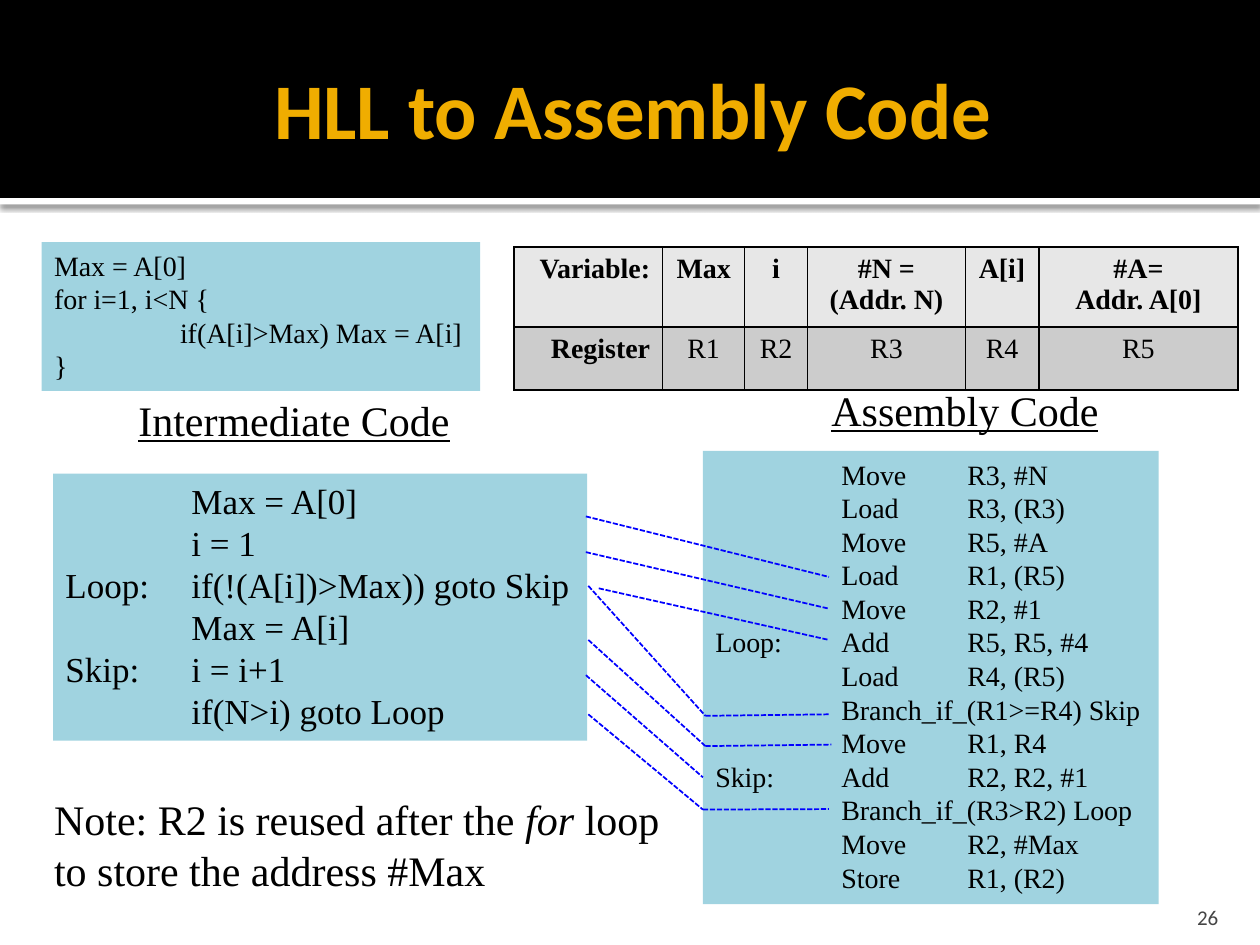
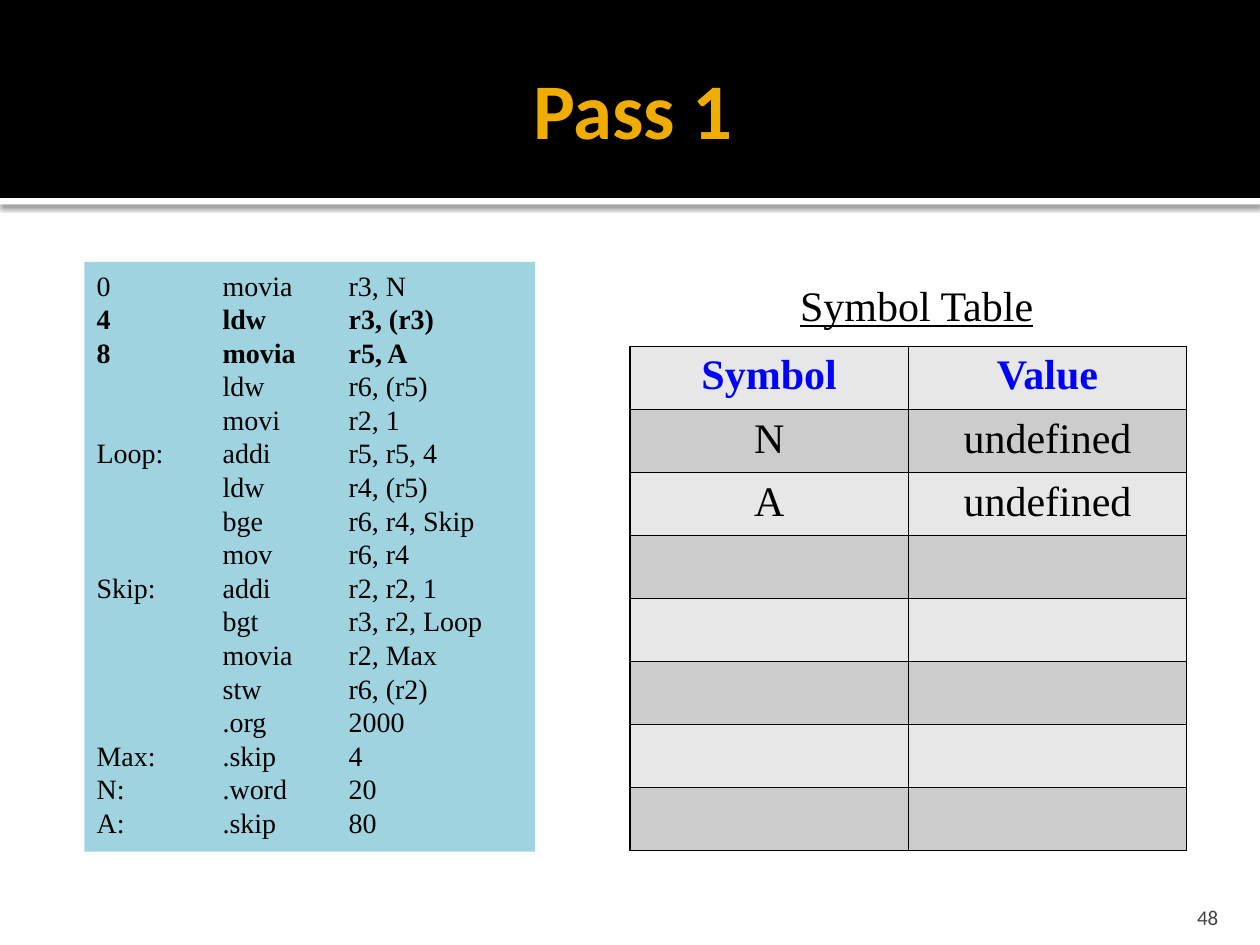
from dataclasses import dataclass
from itertools import pairwise

from lxml.etree import SubElement
from pptx import Presentation
from pptx.dml.color import RGBColor
from pptx.enum.dml import MSO_LINE
from pptx.enum.shapes import MSO_CONNECTOR, MSO_SHAPE
from pptx.enum.text import MSO_ANCHOR, PP_ALIGN
from pptx.oxml.ns import qn
from pptx.util import Cm, Pt


@dataclass(frozen=True)
class Theme:
    black: str = "000000"
    white: str = "FFFFFF"
    gold: str = "F0AD00"
    grey: str = "454545"
    code_fill: str = "A0D3E0"
    blue: str = "0000FF"
    row_fills: tuple = ("E7E7E7", "CCCCCC")
    heading_font: str = "Calibri"
    body_font: str = "Times New Roman"
    title: int = 45
    heading: int = 24
    code_large: int = 20
    code: int = 16
    number: int = 12
    tab: float = 2.54


THEME = Theme()
SLIDE_W, SLIDE_H, BAND_H = 25.4, 19.05, 3.99

# Code lines hold label, operation and operands; boxes are left, top, width, height in cm.
SOURCE = [
    ("Max = A[0]",),
    ("for i=1, i<N {",),
    ("", "if(A[i]>Max) Max = A[i]"),
    ("}",),
]
INTERMEDIATE = [
    ("", "Max = A[0]"),
    ("", "i = 1"),
    ("Loop: ", "if(!(A[i])>Max)) goto Skip"),
    ("", "Max = A[i]"),
    ("Skip:", "i = i+1"),
    ("", "if(N>i) goto Loop"),
]
ASSEMBLY = [
    ("", "Move", "R3, #N"),
    ("", "Load", "R3, (R3)"),
    ("", "Move", "R5, #A"),
    ("", "Load ", "R1, (R5)"),
    ("", "Move", "R2, #1"),
    ("Loop:", "Add", "R5, R5, #4"),
    ("", "Load", "R4, (R5)"),
    ("", "Branch_if_(R1>=R4) Skip"),
    ("", "Move", "R1, R4"),
    ("Skip:", "Add", "R2, R2, #1"),
    ("", "Branch_if_(R3>R2) Loop"),
    ("", "Move", "R2, #Max"),
    ("", "Store", "R1, (R2)"),
]
PASS_ONE = [
    ("0", "movia", "r3, N"),
    ("4", "ldw", "r3, (r3)"),
    ("8", "movia", "r5, A"),
    ("", "ldw", "r6, (r5)"),
    ("", "movi", "r2, 1"),
    ("Loop:", "addi", "r5, r5, 4"),
    ("", "ldw", "r4, (r5)"),
    ("", "bge", "r6, r4, Skip"),
    ("", "mov", "r6, r4"),
    ("Skip:", "addi", "r2, r2, 1"),
    ("", "bgt", "r3, r2, Loop"),
    ("", "movia", "r2, Max"),
    ("", "stw", "r6, (r2)"),
    ("", ".org", "2000"),
    ("Max:", ".skip ", "4"),
    ("N:", ".word", "20"),
    ("A:", ".skip", "80"),
]
CURRENT_LINES = (1, 2)
REGISTERS = [
    ["Variable:", "Max", "i", "#N =\n(Addr. N)", "A[i]", "#A=\nAddr. A[0]"],
    ["Register", "R1", "R2", "R3", "R4", "R5"],
]
SYMBOLS = [["Symbol", "Value"], ["N", "undefined"], ["A", "undefined"]] + [["", ""]] * 5
NOTE = ["Note: R2 is reused after the for loop", "to store the address #Max"]

# Each trace leads from an intermediate line to the assembly line it becomes.
TRACES = [
    [(11.81, 10.41), (16.71, 11.63)],
    [(11.81, 11.13), (16.71, 12.27)],
    [(12.07, 11.86), (16.71, 12.9)],
    [(11.86, 11.81), (14.22, 14.43), (16.71, 14.4)],
    [(11.86, 12.9), (14.22, 15.04), (16.76, 15.01)],
    [(11.81, 13.61), (14.17, 15.67)],
    [(11.86, 14.4), (14.17, 16.32), (16.71, 16.31)],
]


def rgb(color):
    return RGBColor.from_string(color)


def cm(values):
    return [Cm(v) for v in values]


def style(p, size, color=THEME.black, font=THEME.body_font, align=PP_ALIGN.LEFT,
          bold=False, underline=False):
    p.alignment = align
    for r in p.runs:
        f = r.font
        f.size, f.name, f.bold, f.underline = Pt(size), font, bold, underline
        f.color.rgb = rgb(color)


def add_rect(s, box, fill):
    sp = s.shapes.add_shape(MSO_SHAPE.RECTANGLE, *cm(box))
    sp.shadow.inherit = False
    sp.fill.solid()
    sp.fill.fore_color.rgb = rgb(fill)
    sp.line.fill.background()
    return sp


def add_text(s, box, text, size, anchor=MSO_ANCHOR.TOP, wrap=False, **look):
    sp = s.shapes.add_textbox(*cm(box))
    tf = sp.text_frame
    tf.text = text
    tf.word_wrap = wrap
    tf.vertical_anchor = anchor
    for p in tf.paragraphs:
        style(p, size, **look)
    return tf


def add_code(s, box, lines, size, bold_lines=()):
    tf = add_rect(s, box, THEME.code_fill).text_frame
    tf.text = "\n".join("\t".join(line) for line in lines)
    tf.word_wrap = False
    tf.vertical_anchor = MSO_ANCHOR.TOP
    for i, p in enumerate(tf.paragraphs):
        style(p, size, bold=i in bold_lines)
        tabs = SubElement(p._p.get_or_add_pPr(), qn("a:tabLst"))
        for stop in (1, 2):
            SubElement(tabs, qn("a:tab"), pos=str(Cm(stop * THEME.tab)), algn="l")


def add_borders(cell):
    """Draw a thin black line on all four sides, ahead of the cell's fill."""
    tc_pr = cell._tc.get_or_add_tcPr()
    for i, side in enumerate(("lnL", "lnR", "lnT", "lnB")):
        ln = SubElement(tc_pr, qn(f"a:{side}"), w=str(Pt(1)))
        fill = SubElement(ln, qn("a:solidFill"))
        SubElement(fill, qn("a:srgbClr"), val=THEME.black)
        tc_pr.insert(i, ln)


def add_grid(s, left, top, widths, heights, rows, size, look):
    """Add a banded table; look(row, column) gives the text style of a cell."""
    box = cm((left, top, sum(widths), sum(heights)))
    table = s.shapes.add_table(len(rows), len(widths), *box).table
    for col, width in zip(table.columns, widths):
        col.width = Cm(width)
    for i, (row, height) in enumerate(zip(rows, heights)):
        table.rows[i].height = Cm(height)
        for j, text in enumerate(row):
            cell = table.cell(i, j)
            cell.text = text
            cell.fill.solid()
            cell.fill.fore_color.rgb = rgb(THEME.row_fills[i % 2])
            add_borders(cell)
            for p in cell.text_frame.paragraphs:
                style(p, size, **look(i, j))
                if not text:
                    p.font.size = Pt(size)


def add_trace(s, points):
    for start, end in pairwise(points):
        line = s.shapes.add_connector(MSO_CONNECTOR.STRAIGHT, *cm(start + end))
        line.line.color.rgb = rgb(THEME.blue)
        line.line.width = Pt(1)
        line.line.dash_style = MSO_LINE.SQUARE_DOT
        SubElement(line._element.spPr, qn("a:effectLst"))


def add_heading(s, box, text):
    add_text(s, box, text, THEME.heading, underline=True)


def add_slide(prs, title, number):
    """Add a slide with the title band, its shadowed edge and the page number."""
    s = prs.slides.add_slide(prs.slide_layouts[6])
    edge = add_rect(s, (0, BAND_H, SLIDE_W, 0.13), THEME.white)
    effects = edge._element.spPr.find(qn("a:effectLst"))
    shadow = SubElement(effects, qn("a:outerShdw"), blurRad=str(Pt(2.5)),
                        dist=str(Pt(2)), dir="5400000", rotWithShape="0")
    color = SubElement(shadow, qn("a:srgbClr"), val=THEME.black)
    SubElement(color, qn("a:alpha"), val="60000")
    add_rect(s, (0, 0, SLIDE_W, BAND_H), THEME.black)
    tf = add_text(s, (1.27, 0.43, 22.86, 3.48), title, THEME.title, MSO_ANCHOR.MIDDLE, True,
                  color=THEME.gold, font=THEME.heading_font, align=PP_ALIGN.CENTER, bold=True)
    tf.margin_right = Cm(0.13)
    tf = add_text(s, (22.78, 17.98, 2.03, 0.76), str(number), THEME.number, MSO_ANCHOR.BOTTOM,
                  True, color=THEME.grey, font=THEME.heading_font, align=PP_ALIGN.RIGHT)
    tf.margin_bottom = 0
    return s


def register_look(row, col):
    return {"align": PP_ALIGN.CENTER if col else PP_ALIGN.RIGHT, "bold": row == 0 or col == 0}


def symbol_look(row, col):
    return {"align": PP_ALIGN.CENTER, "bold": row == 0,
            "color": THEME.black if row else THEME.blue}


def build_assembly_slide(prs):
    s = add_slide(prs, "HLL to Assembly Code", 26)
    add_heading(s, (2.54, 7.82, 6.86, 1.27), "Intermediate Code")
    add_code(s, (1.07, 9.55, 10.77, 5.38), INTERMEDIATE, THEME.code_large)
    add_code(s, (0.84, 4.88, 8.84, 3), SOURCE, THEME.code)
    add_code(s, (14.17, 9.09, 9.19, 9.14), ASSEMBLY, THEME.code)
    for points in TRACES:
        add_trace(s, points)
    add_heading(s, (16.51, 7.62, 5.99, 1.27), "Assembly Code")
    add_grid(s, 10.36, 4.98, (3, 1.65, 1.27, 3.18, 1.48, 4.02), (1.61, 1.27),
             REGISTERS, THEME.code, register_look)
    tf = add_text(s, (0.84, 15.88, 12.88, 2.31), "\n".join(NOTE), THEME.heading)
    p = tf.paragraphs[0]
    before, word, after = NOTE[0].partition("for ")
    p.runs[0].text = before
    for text in (word, after):
        p.add_run().text = text
    style(p, THEME.heading)
    p.runs[1].font.italic = True


def build_pass_slide(prs):
    s = add_slide(prs, "Pass 1", 48)
    add_code(s, (1.7, 5.28, 9.09, 11.89), PASS_ONE, THEME.code, CURRENT_LINES)
    add_grid(s, 12.7, 6.98, (5.61,) * 2, (1.27,) * len(SYMBOLS),
             SYMBOLS, THEME.heading, symbol_look)
    add_heading(s, (15.88, 5.51, 5.26, 1.27), "Symbol Table")


def main():
    prs = Presentation()
    prs.slide_width, prs.slide_height = cm((SLIDE_W, SLIDE_H))
    build_assembly_slide(prs)
    build_pass_slide(prs)
    prs.save("out.pptx")


if __name__ == "__main__":
    main()
